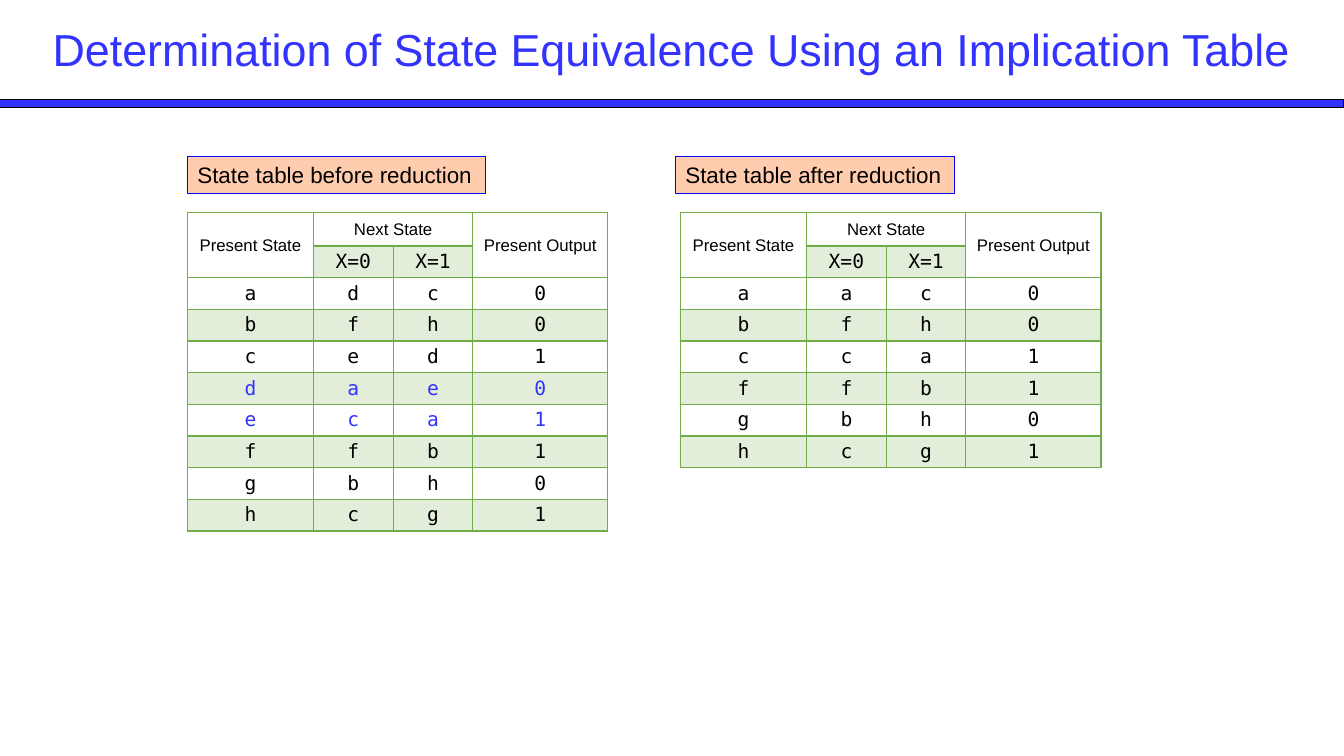
from pptx import Presentation
from pptx.dml.color import RGBColor
from pptx.enum import shapes, text
from pptx.oxml.ns import qn
from pptx.oxml.xmlchemy import OxmlElement
from pptx.util import Inches, Pt

BLUE = RGBColor(0x33, 0x33, 0xFF)
LABEL_LINE = RGBColor(0x00, 0x00, 0xFF)
ORANGE = RGBColor(0xFF, 0x66, 0x00)
GREEN = RGBColor(0x70, 0xAD, 0x47)
BLACK = RGBColor(0x00, 0x00, 0x00)

SANS, MONO = "Arial", "DejaVu Sans Mono"
COLUMN_WIDTHS = (1.25, 0.79, 0.79, 1.34)
HEADER_ROW, BODY_ROW = Inches(0.33), Inches(2.2 / 7)

# Present state, next state for X=0 and X=1, present output
BEFORE = ("adc0", "bfh0", "ced1", "dae0", "eca1", "ffb1", "gbh0", "hcg1")
AFTER = ("aac0", "bfh0", "cca1", "ffb1", "gbh0", "hcg1")
REMOVED_STATES = "de"


def fill_solid(fill, properties, color, percent=100):
    fill.solid()
    fill.fore_color.rgb = color
    if percent < 100:
        alpha = OxmlElement("a:alpha")
        alpha.set("val", str(percent * 1000))
        properties.find(qn("a:solidFill"))[0].append(alpha)


def write(tf, words, size, color=BLACK, font=SANS, align=text.PP_ALIGN.CENTER):
    p = tf.paragraphs[0]
    p.text = words
    p.alignment = align
    r = p.runs[0]
    r.font.name, r.font.size = font, Pt(size)
    r.font.color.rgb = color


def add_box(s, left, top, width, height, color, line, percent=100):
    sp = s.shapes.add_shape(shapes.MSO_SHAPE.RECTANGLE, Inches(left),
                            Inches(top), Inches(width), Inches(height))
    sp.shadow.inherit = False
    fill_solid(sp.fill, sp._element.spPr, color, percent)
    sp.line.color.rgb = line
    sp.line.width = Pt(0.75)
    return sp


def add_label(s, left, width, words):
    sp = add_box(s, left, 1.55, width, 0.37, ORANGE, LABEL_LINE, 32)
    tf = sp.text_frame
    tf.word_wrap = False
    tf.auto_size = text.MSO_AUTO_SIZE.SHAPE_TO_FIT_TEXT
    write(tf, words, 16, align=text.PP_ALIGN.LEFT)


def add_title(s, words):
    tf = s.shapes.add_textbox(Inches(0.21), Inches(0.13),
                              Inches(12.91), Inches(0.71)).text_frame
    tf.word_wrap = True
    tf.vertical_anchor = text.MSO_ANCHOR.MIDDLE
    write(tf, words, 32, BLUE)


def add_border(cell, side, points):
    ln = OxmlElement(f"a:ln{side}")
    ln.set("w", str(Pt(points)))
    solid, color = OxmlElement("a:solidFill"), OxmlElement("a:srgbClr")
    color.set("val", str(GREEN))
    solid.append(color)
    ln.append(solid)
    cell._tc.get_or_add_tcPr().append(ln)


def style_cell(cell, row, col):
    cell.margin_left = cell.margin_right = Inches(0.1)
    cell.margin_top = cell.margin_bottom = 0
    cell.vertical_anchor = text.MSO_ANCHOR.MIDDLE
    # The rule under "Next State" is heavier than the others
    heavy_side = {0: "B", 1: "T"}.get(row) if col in (1, 2) else None
    for side in "LRTB":
        add_border(cell, side, 2 if side == heavy_side else 1)
    if row % 2 and not cell.is_spanned:
        fill_solid(cell.fill, cell._tc.get_or_add_tcPr(), GREEN, 20)
    else:
        cell.fill.background()


def add_state_table(s, left, states):
    rows = [("Present State", "Next State", "", "Present Output"),
            ("", "X=0", "X=1", ""), *states]
    height = HEADER_ROW + BODY_ROW * (len(rows) - 1)
    table = s.shapes.add_table(len(rows), len(COLUMN_WIDTHS), Inches(left), Inches(2.11),
                               Inches(sum(COLUMN_WIDTHS)), height).table
    table.first_row = table.horz_banding = False
    for column, width in zip(table.columns, COLUMN_WIDTHS):
        column.width = Inches(width)
    for i, row in enumerate(table.rows):
        row.height = BODY_ROW if i else HEADER_ROW

    # Header spans
    table.cell(0, 0).merge(table.cell(1, 0))
    table.cell(0, 1).merge(table.cell(0, 2))
    table.cell(0, 3).merge(table.cell(1, 3))

    for i, values in enumerate(rows):
        color = BLUE if values[0] and values[0] in REMOVED_STATES else BLACK
        size, font = (14, MONO) if i else (12, SANS)
        for j, value in enumerate(values):
            cell = table.cell(i, j)
            style_cell(cell, i, j)
            if value:
                write(cell.text_frame, value, size, color, font)


def main():
    prs = Presentation()
    prs.slide_width, prs.slide_height = Inches(13.33), Inches(7.5)
    s = prs.slides.add_slide(prs.slide_layouts[6])

    # Heading and rule
    add_box(s, 0, 0.99, 13.33, 0.08, BLUE, BLACK)
    add_title(s, "Determination of State Equivalence Using an Implication Table")

    # State tables
    add_state_table(s, 6.75, AFTER)
    add_label(s, 6.7, 2.77, "State table after reduction")
    add_state_table(s, 1.86, BEFORE)
    add_label(s, 1.86, 2.96, "State table before reduction")

    prs.save("out.pptx")


if __name__ == "__main__":
    main()
